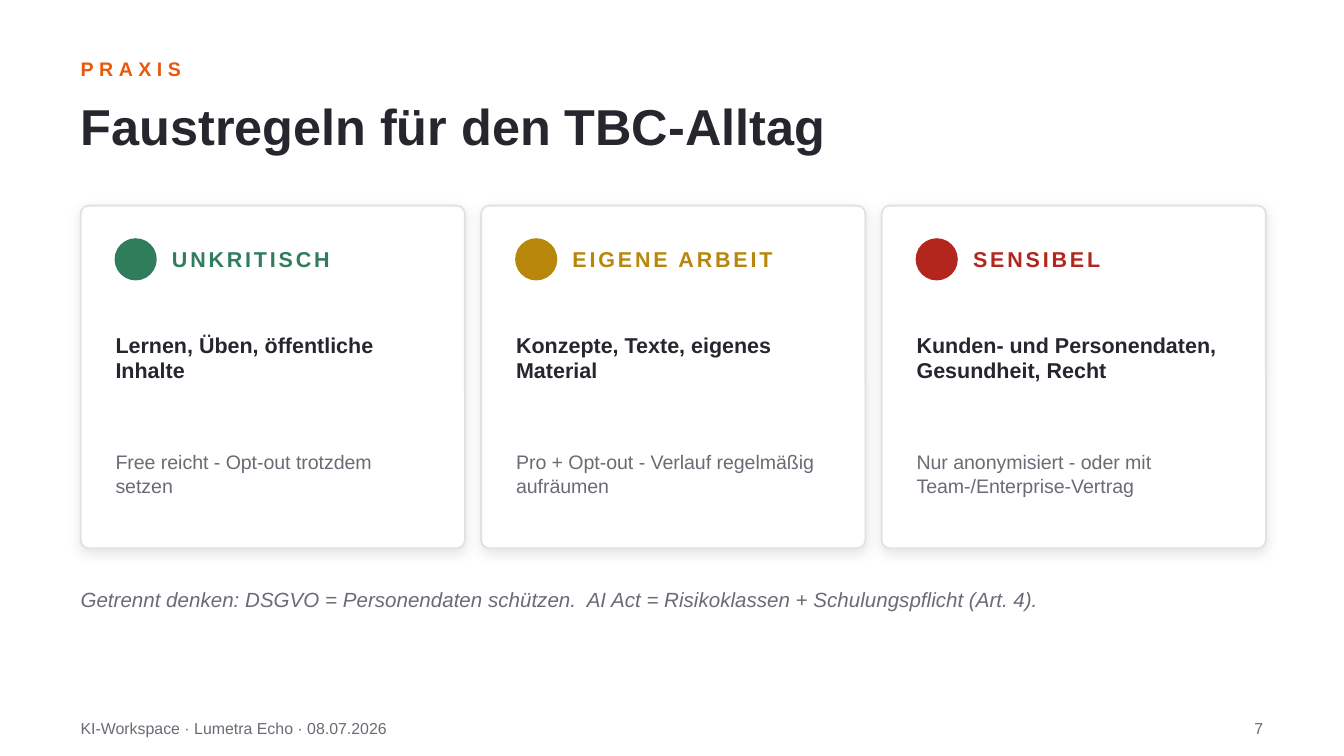
from dataclasses import dataclass

from lxml import etree
from pptx import Presentation
from pptx import util as u
from pptx.dml.color import RGBColor
from pptx.enum import shapes, text
from pptx.oxml.ns import qn


@dataclass(frozen=True)
class Theme:
    font: str = "Arial"
    ink: str = "26262E"
    muted: str = "6B6B75"
    accent: str = "E8590C"
    paper: str = "FFFFFF"
    edge: str = "E4E2DF"
    green: str = "2F7D5B"
    amber: str = "B8860B"
    red: str = "B3261E"
    title: float = 27
    label: float = 11.5
    note: float = 11
    body: float = 10.5
    small: float = 8.5


T = Theme()
LEFT, WIDTH = 0.6, 8.8

CARDS = [
    (T.green, "UNKRITISCH", "Lernen, Üben, öffentliche Inhalte",
     "Free reicht - Opt-out trotzdem setzen"),
    (T.amber, "EIGENE ARBEIT", "Konzepte, Texte, eigenes Material",
     "Pro + Opt-out - Verlauf regelmäßig aufräumen"),
    (T.red, "SENSIBEL", "Kunden- und Personendaten, Gesundheit, Recht",
     "Nur anonymisiert - oder mit Team-/Enterprise-Vertrag"),
]


def inches(*box):
    return [u.Inches(v) for v in box]


def style(shape, words, size, color, bold=False, italic=False, space=0,
          align=text.PP_ALIGN.LEFT):
    """Set and format the single paragraph of text in a shape."""
    frame = shape.text_frame
    frame.text = words
    frame.word_wrap = True
    frame.auto_size = text.MSO_AUTO_SIZE.NONE
    frame.vertical_anchor = text.MSO_ANCHOR.MIDDLE
    frame.margin_left = frame.margin_right = 0
    frame.margin_top = frame.margin_bottom = 0
    para = frame.paragraphs[0]
    para.alignment = align
    font = para.runs[0].font
    font.name, font.size = T.font, u.Pt(size)
    font.bold, font.italic = bold, italic
    font.color.rgb = RGBColor.from_string(color)
    if space:
        font._element.set("spc", str(int(space * 100)))


def label(slide, box, words, size, color, **look):
    style(slide.shapes.add_textbox(*inches(*box)), words, size, color, **look)


def form(slide, kind, box, fill, line):
    shape = slide.shapes.add_shape(kind, *inches(*box))
    shape.fill.solid()
    shape.fill.fore_color.rgb = RGBColor.from_string(fill)
    shape.line.color.rgb = RGBColor.from_string(line)
    shape.line.width = u.Pt(1)
    shape.shadow.inherit = False
    return shape


def shade(shape):
    """Give a shape a soft shadow straight below it."""
    effects = shape._element.spPr.find(qn("a:effectLst"))
    outer = etree.SubElement(
        effects, qn("a:outerShdw"), blurRad=str(u.Pt(7)), dist=str(u.Pt(2)),
        dir=str(90 * 60000), algn="ctr", rotWithShape="0")
    color = etree.SubElement(outer, qn("a:srgbClr"), val="000000")
    etree.SubElement(color, qn("a:alpha"), val="10000")


def header(slide, x, y, w):
    label(slide, (x, y, w, 0.26), "PRAXIS", T.body, T.accent,
          bold=True, space=3)
    title = slide.shapes.title
    title.left, title.top, title.width, title.height = inches(
        x, y + 0.24, w, 0.62)
    style(title, "Faustregeln für den TBC-Alltag", T.title, T.ink, bold=True)


def card(slide, x, y, w, h, color, name, scope, rule):
    # Panel
    panel = form(slide, shapes.MSO_SHAPE.ROUNDED_RECTANGLE, (x, y, w, h),
                 T.paper, T.edge)
    panel.adjustments[0] = 0.024
    shade(panel)
    # Signal light and its name
    pad, dot = 0.26, 0.3
    form(slide, shapes.MSO_SHAPE.OVAL, (x + pad, y + 0.25, dot, dot),
         color, color)
    label(slide, (x + 0.68, y + 0.25, w - 0.9, dot), name, T.label, color,
          bold=True, space=1.5)
    # Scope and rule
    wide = w - 2 * pad
    label(slide, (x + pad, y + 0.73, wide, 0.8), scope, T.label, T.ink,
          bold=True)
    label(slide, (x + pad, y + 1.57, wide, 0.85), rule, T.body, T.muted)


def row(slide, x, y, w, h, gap):
    for i, data in enumerate(CARDS):
        card(slide, x + i * (w + gap), y, w, h, *data)


def footer(slide, x, y, w, h):
    label(slide, (x, y, 6, h), "KI-Workspace · Lumetra Echo · 08.07.2026",
          T.small, T.muted)
    label(slide, (x + w - 0.6, y, 0.6, h), "7", T.small, T.muted,
          align=text.PP_ALIGN.RIGHT)


def main():
    # 16:9 page, ten inches wide
    deck = Presentation()
    deck.slide_width = u.Inches(10)
    deck.slide_height = u.Inches(10 * 9 / 16)
    slide = deck.slides.add_slide(deck.slide_layouts[5])
    slide.background.fill.solid()
    slide.background.fill.fore_color.rgb = RGBColor.from_string(T.paper)

    header(slide, LEFT, 0.38, WIDTH)
    row(slide, LEFT, 1.53, 2.86, 2.55, 0.12)
    label(slide, (LEFT, 4.3, WIDTH, 0.32),
          "Getrennt denken: DSGVO = Personendaten schützen.  "
          "AI Act = Risikoklassen + Schulungspflicht (Art. 4).",
          T.note, T.muted, italic=True)
    footer(slide, LEFT, 5.3, WIDTH, 0.24)
    deck.save("out.pptx")


if __name__ == "__main__":
    main()
